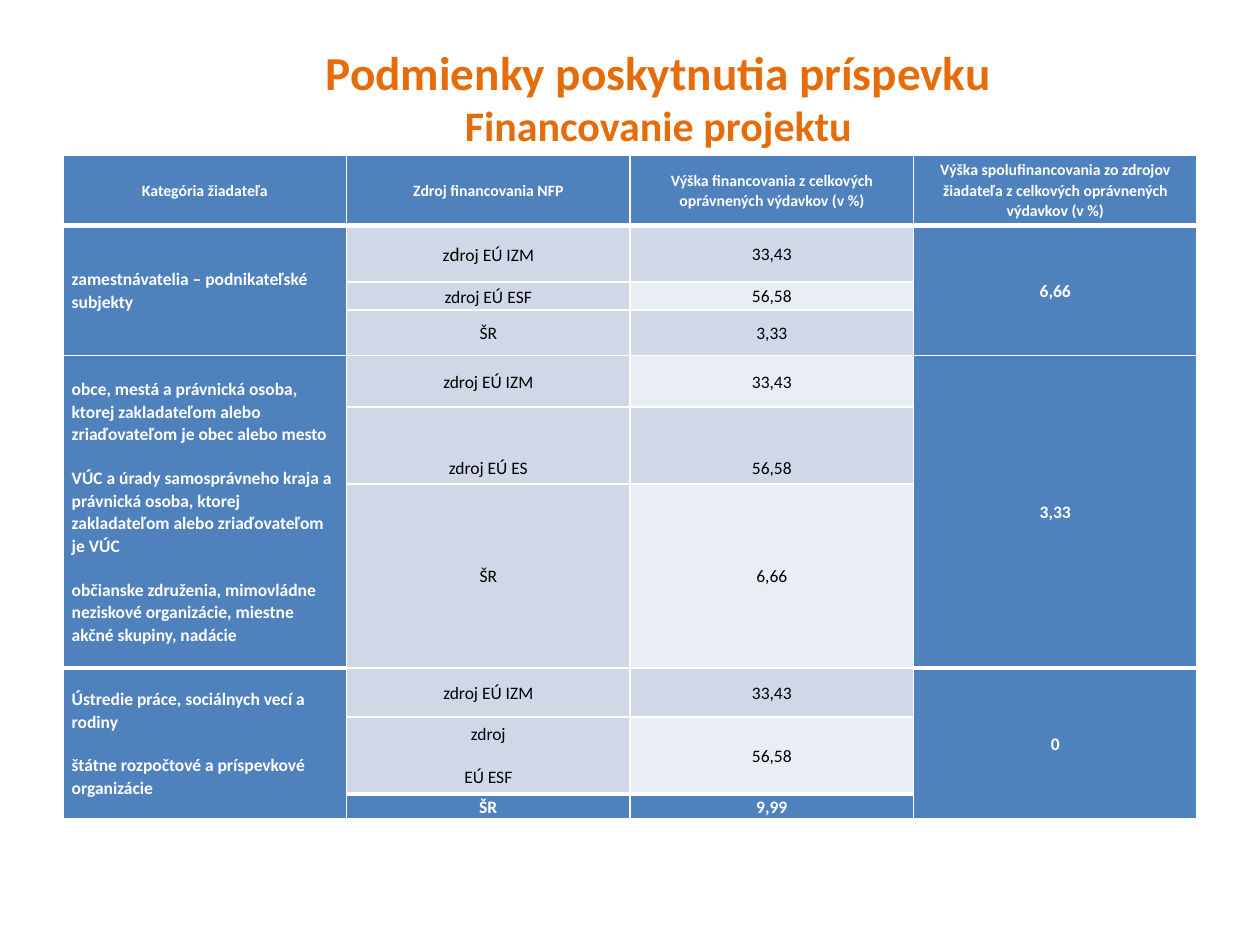
from lxml import etree
from pptx import Presentation
from pptx.dml.color import RGBColor
from pptx.enum.text import MSO_ANCHOR, MSO_AUTO_SIZE, PP_ALIGN
from pptx.oxml.ns import qn
from pptx.util import Pt

TOP, MIDDLE = MSO_ANCHOR.TOP, MSO_ANCHOR.MIDDLE
LEFT, CENTER = PP_ALIGN.LEFT, PP_ALIGN.CENTER
NO_AUTOFIT = MSO_AUTO_SIZE.NONE

COLORS = {
    "heading": "E46C0A",
    "header": "4F81BD",
    "band_dark": "D0D8E8",
    "band_light": "E9EDF4",
    "border": "FFFFFF",
    "light_text": "FFFFFF",
    "dark_text": "000000",
}
FONT = "Calibri"
TITLE_LINES = [("Podmienky poskytnutia príspevku", 27), ("Financovanie projektu", 24)]
HEADERS = [
    "Kategória žiadateľa",
    "Zdroj financovania NFP",
    "Výška financovania z celkových oprávnených výdavkov (v %)",
    "Výška spolufinancovania zo zdrojov žiadateľa z celkových oprávnených výdavkov (v %)",
]
# Each group: applicant paragraphs, own share, (source paragraphs, share) rows.
# A paragraph is a string or a list of (text, size) runs.
GROUPS = [
    (["zamestnávatelia – podnikateľské subjekty"], "6,66", [
        ([[("z", 10), ("d", 11), ("roj EÚ IZM", 10)]], "33,43"),
        ([[("zdroj EÚ", 10), (" ", 11), ("ESF", 10)]], "56,58"),
        (["ŠR"], "3,33"),
    ]),
    (["obce, mestá a právnická osoba, ktorej zakladateľom alebo zriaďovateľom je obec alebo mesto",
      "VÚC a úrady samosprávneho kraja a právnická osoba, ktorej zakladateľom alebo "
      "zriaďovateľom je VÚC",
      "občianske združenia, mimovládne neziskové organizácie, miestne akčné skupiny, nadácie"],
     "3,33", [
        (["zdroj EÚ IZM"], "33,43"),
        (["zdroj EÚ ES"], "56,58"),
        (["ŠR"], "6,66"),
    ]),
    (["Ústredie práce, sociálnych vecí a rodiny",
      "štátne rozpočtové a príspevkové organizácie"], "0", [
        (["zdroj EÚ IZM"], "33,43"),
        (["zdroj", "EÚ ESF"], "56,58"),
        (["ŠR"], "9,99"),
    ]),
]
ROW_HEIGHTS = [40, 32.4, 16, 26, 29.5, 44, 105, 28, 44, 14.4]
COLUMN_WIDTH = 162
LOWERED_ROW, LOWERED_BY = 5, 25
# Cells (row, column) with a thick line above them
THICK_ABOVE = {(1, c) for c in range(4)} | {(7, 0), (7, 3), (9, 1), (9, 2)}


def set_all(target, values):
    for name, value in values.items():
        setattr(target, name, value)


def add_run(paragraph, text, size, color, bold):
    run = paragraph.add_run()
    run.text = text
    set_all(run.font, {"name": FONT, "size": Pt(size), "bold": bold})
    run.font.color.rgb = RGBColor.from_string(COLORS[color])


def add_title(slide):
    title = slide.shapes.title
    set_all(title, {"left": Pt(54), "top": Pt(21), "width": Pt(644.4), "height": Pt(68)})
    frame = title.text_frame
    set_all(frame, {"vertical_anchor": TOP, "auto_size": NO_AUTOFIT, "word_wrap": True})
    for i, (text, size) in enumerate(TITLE_LINES):
        paragraph = frame.add_paragraph() if i else frame.paragraphs[0]
        paragraph.alignment = CENTER
        add_run(paragraph, text, size, "heading", True)


def set_borders(cell, widths):
    properties = cell._tc.get_or_add_tcPr()
    for side, width in widths.items():
        line = etree.SubElement(properties, qn(f"a:ln{side}"), w=str(Pt(width)))
        fill = etree.SubElement(line, qn("a:solidFill"))
        etree.SubElement(fill, qn("a:srgbClr"), val=COLORS["border"])


def write_cell(cell, paragraphs, fill, size=10, align=CENTER, top_margin=0):
    set_all(cell, {"margin_left": Pt(5), "margin_right": Pt(5), "margin_top": Pt(top_margin),
                   "margin_bottom": Pt(0), "vertical_anchor": MIDDLE})
    cell.fill.solid()
    cell.fill.fore_color.rgb = RGBColor.from_string(COLORS[fill])
    strong = fill == "header"
    color = "light_text" if strong else "dark_text"
    for i, content in enumerate(paragraphs):
        paragraph = cell.text_frame.add_paragraph() if i else cell.text_frame.paragraphs[0]
        set_all(paragraph, {"alignment": align, "line_spacing": 1.07,
                            "space_before": Pt(12 if i else 0), "space_after": Pt(0)})
        runs = [(content, size)] if isinstance(content, str) else content
        for text, run_size in runs:
            add_run(paragraph, text, run_size, color, strong)


def fill_group(table, first_row, applicants, own_share, sources):
    last_row = first_row + len(sources) - 1
    for column, paragraphs, align in ((0, applicants, LEFT), (3, [own_share], CENTER)):
        origin = table.cell(first_row, column)
        origin.merge(table.cell(last_row, column))
        write_cell(origin, paragraphs, "header", align=align)
    for row, (source, share) in enumerate(sources, first_row):
        source_fill = "band_dark"
        share_fill = "band_dark" if row % 2 else "band_light"
        if row == len(ROW_HEIGHTS) - 1:
            source_fill = share_fill = "header"
        margin = LOWERED_BY if row == LOWERED_ROW else 0
        write_cell(table.cell(row, 1), source, source_fill, top_margin=margin)
        write_cell(table.cell(row, 2), [share], share_fill, top_margin=margin)


def add_funding_table(slide):
    rows, columns = len(ROW_HEIGHTS), len(HEADERS)
    table = slide.shapes.add_table(rows, columns, Pt(36), Pt(88.8), Pt(columns * COLUMN_WIDTH),
                                   Pt(sum(ROW_HEIGHTS))).table
    table.horz_banding = False
    for column in table.columns:
        column.width = Pt(COLUMN_WIDTH)
    for r, height in enumerate(ROW_HEIGHTS):
        table.rows[r].height = Pt(height)
        for c in range(columns):
            set_borders(table.cell(r, c), {
                "L": 1, "R": 1,
                "T": 3 if (r, c) in THICK_ABOVE else 1,
                "B": 3 if (r + 1, c) in THICK_ABOVE else 1,
            })
    for c, header in enumerate(HEADERS):
        write_cell(table.cell(0, c), [header], "header", size=9)
    first_row = 1
    for applicants, own_share, sources in GROUPS:
        fill_group(table, first_row, applicants, own_share, sources)
        first_row += len(sources)


def main():
    deck = Presentation()
    set_all(deck, {"slide_width": Pt(720), "slide_height": Pt(540)})
    slide = deck.slides.add_slide(deck.slide_layouts[5])
    add_title(slide)
    add_funding_table(slide)
    deck.save("out.pptx")


if __name__ == "__main__":
    main()
